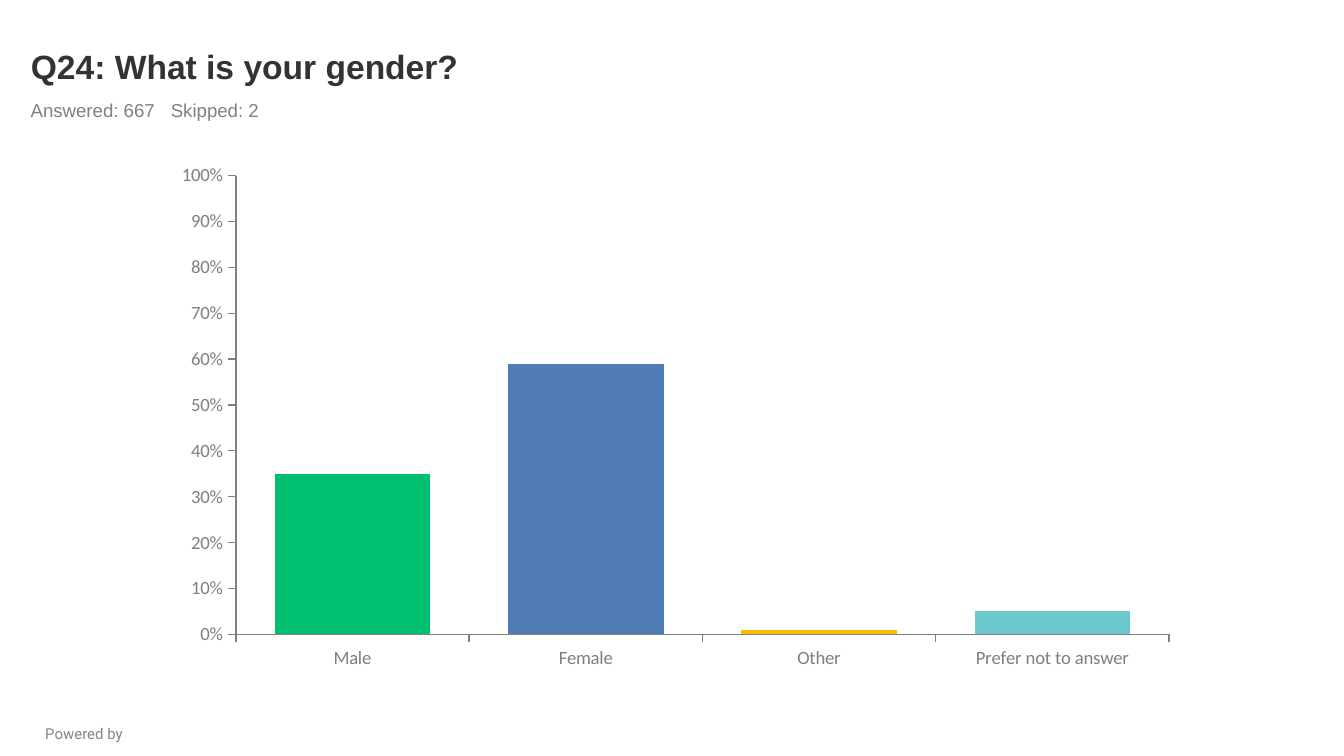
from lxml import etree
from pptx import Presentation
from pptx.chart.data import CategoryChartData
from pptx.dml.color import RGBColor
from pptx.enum.chart import XL_CHART_TYPE, XL_TICK_LABEL_POSITION, XL_TICK_MARK
from pptx.enum.text import MSO_ANCHOR, MSO_AUTO_SIZE, PP_ALIGN
from pptx.oxml.ns import qn
from pptx.util import Cm, Pt

COLUMN = XL_CHART_TYPE.COLUMN_CLUSTERED
LABELS_LOW = XL_TICK_LABEL_POSITION.LOW
TICK_OUT, TICK_NONE = XL_TICK_MARK.OUTSIDE, XL_TICK_MARK.NONE
TOP, BOTTOM = MSO_ANCHOR.TOP, MSO_ANCHOR.BOTTOM
NO_AUTOFIT = MSO_AUTO_SIZE.NONE
LEFT, CENTER = PP_ALIGN.LEFT, PP_ALIGN.CENTER

TITLE_ONLY = 5
AXIS_GREY = "7F7F7F"
# Answer, share of respondents, bar colour
ANSWERS = [
    ("Male", 0.35, "00BF6F"),
    ("Female", 0.59, "507CB6"),
    ("Other", 0.01, "F9BE00"),
    ("Prefer not to answer", 0.05, "6BC8CD"),
]


def rgb(value):
    return RGBColor.from_string(value)


def set_font(font, name, size, color, bold=False):
    font.name = name
    font.size = Pt(size)
    font.bold = bold
    font.color.rgb = rgb(color)


def add_tab_stop(paragraph, position):
    properties = paragraph._p.get_or_add_pPr()
    tab_list = etree.SubElement(properties, qn("a:tabLst"))
    etree.SubElement(tab_list, qn("a:tab"), pos=str(position), algn="l")


def place(shape, left, top, width, height):
    shape.left, shape.top = Cm(left), Cm(top)
    shape.width, shape.height = Cm(width), Cm(height)


def write_text(shape, text, font, align=LEFT, anchor=TOP, tab=None):
    frame = shape.text_frame
    frame.word_wrap = True
    frame.auto_size = NO_AUTOFIT
    frame.vertical_anchor = anchor
    frame.text = text
    paragraph = frame.paragraphs[0]
    paragraph.alignment = align
    if tab:
        add_tab_stop(paragraph, tab)
    for run in paragraph.runs:
        set_font(run.font, *font)


def add_text(slide, box, text, font, **options):
    shape = slide.shapes.add_textbox(*map(Cm, box))
    write_text(shape, text, font, **options)


def style_axis(axis):
    axis.has_major_gridlines = False
    axis.major_tick_mark = TICK_OUT
    axis.minor_tick_mark = TICK_NONE
    axis.format.line.color.rgb = rgb(AXIS_GREY)
    axis.format.line.width = Pt(0.75)
    set_font(axis.tick_labels.font, "Calibri", 10, AXIS_GREY)


def add_answer_chart(slide, box):
    data = CategoryChartData(number_format="0%")
    data.categories = [answer for answer, _, _ in ANSWERS]
    data.add_series("Series 1", [share for _, share, _ in ANSWERS])
    chart = slide.shapes.add_chart(COLUMN, *map(Cm, box), data).chart
    chart.has_legend = False
    chart.has_title = False
    set_font(chart.font, "Calibri", 18, "333333")

    # Axes
    style_axis(chart.category_axis)
    chart.category_axis.tick_label_position = LABELS_LOW
    value_axis = chart.value_axis
    style_axis(value_axis)
    value_axis.minimum_scale, value_axis.maximum_scale = 0, 1
    value_axis.major_unit = 0.1
    value_axis.tick_labels.number_format = "0%"
    value_axis.tick_labels.number_format_is_linked = False

    # Bars
    plot = chart.plots[0]
    plot.gap_width, plot.overlap = 50, 100
    plot.vary_by_categories = False
    series = plot.series[0]
    series.invert_if_negative = False
    for index, (_, _, color) in enumerate(ANSWERS):
        fill = series.points[index].format.fill
        fill.solid()
        fill.fore_color.rgb = rgb(color)


def main():
    presentation = Presentation()
    presentation.slide_width, presentation.slide_height = Cm(25.4), Cm(14.28)
    slide = presentation.slides.add_slide(presentation.slide_layouts[TITLE_ONLY])

    # Question and response counts
    title = slide.shapes.title
    place(title, 0.33, 0.23, 22.86, 1.52)
    write_text(title, "Q24: What is your gender?", ("Arial", 18, "333333", True), anchor=BOTTOM)
    add_text(slide, (0.33, 1.75, 22.86, 0.66), "Answered: 667\tSkipped: 2",
             ("Arial", 10, "808080"), tab=Cm(2.65))

    # Answers
    add_answer_chart(slide, (3.05, 2.92, 19.43, 9.91))

    # Footer
    add_text(slide, (0.13, 13.56, 2.92, 0.46), "Powered by",
             ("Roboto", 8, "7C878E"), align=CENTER)

    presentation.save("out.pptx")


if __name__ == "__main__":
    main()
